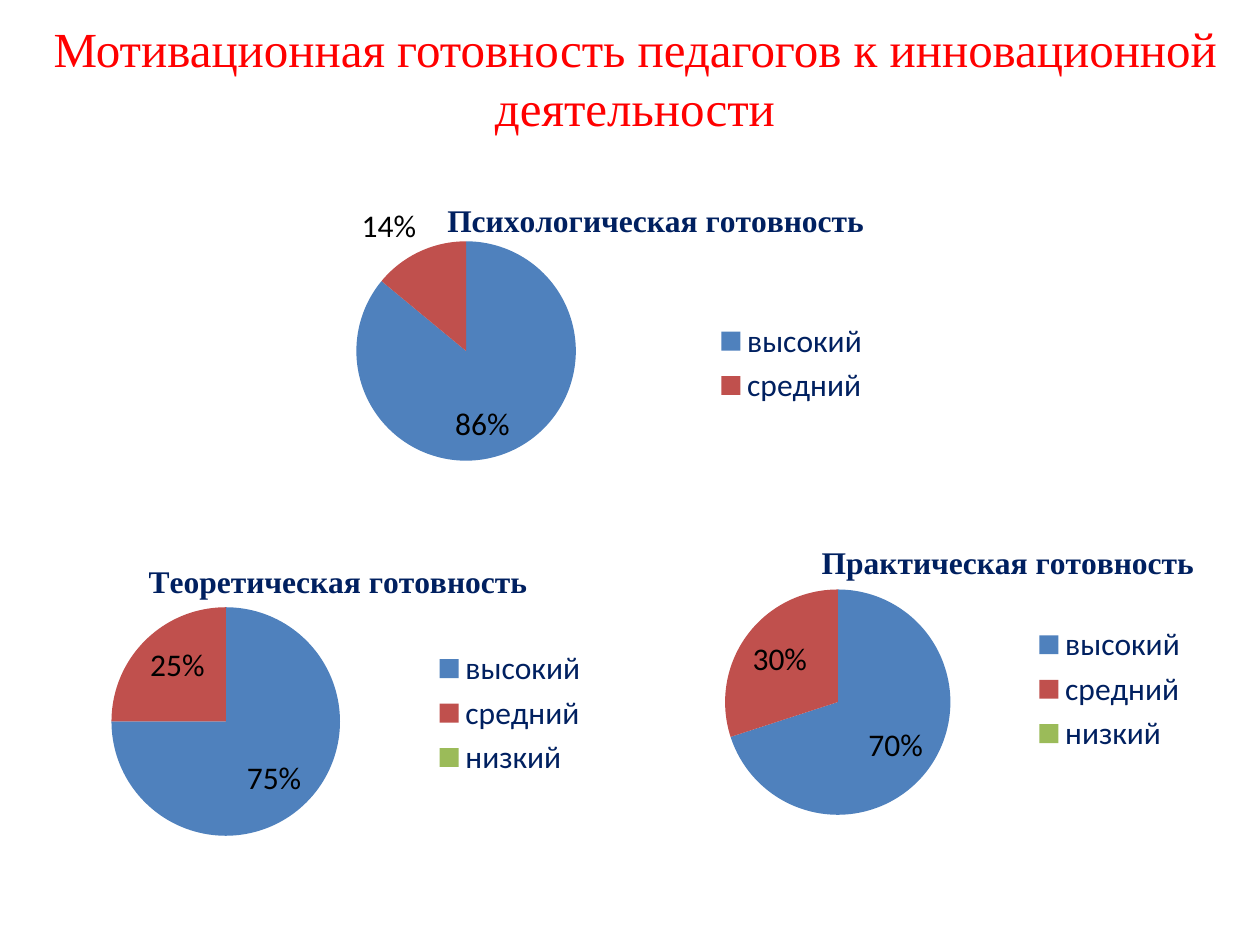
import dataclasses
import typing

import lxml.etree
import pptx
import pptx.chart.data
import pptx.dml.color
import pptx.enum.chart
import pptx.enum.text
import pptx.oxml.ns
import pptx.util

Inches = pptx.util.Inches
Pt = pptx.util.Pt
qn = pptx.oxml.ns.qn
LabelPosition = pptx.enum.chart.XL_LABEL_POSITION

COLORS = {
    "heading": "FF0000",
    "caption": "002060",
    "label": "000000",
    "высокий": "4F81BD",
    "средний": "C0504D",
    "низкий": "9BBB59",
}
LEVELS = ("высокий", "средний", "низкий")
HEADING_FONT = "Times New Roman"
BODY_FONT = "Calibri"


@dataclasses.dataclass
class Pie:
    title: str
    values: tuple
    box: tuple
    plot: tuple
    title_at: tuple
    legend_at: typing.Optional[tuple] = None
    outside_label: typing.Optional[int] = None
    hidden_entry: typing.Optional[int] = None


PIES = (
    Pie("Теоретическая готовность", (0.75, 0.25, None),
        (0.39, 3.98, 4.38, 3.36), (0.08, 0.25, 0.48, 0.54), (0.17, 0.13)),
    Pie("Практическая готовность", (0.7, 0.3, None),
        (5.23, 3.75, 4.3, 3.44), (0.08, 0.27, 0.5, 0.52), (0.29, 0.15)),
    Pie("Психологическая готовность", (0.86, 0.14, None),
        (1.95, 1.41, 6.48, 2.81), (0.07, 0.18, 0.4, 0.62), (0.24, 0.05),
        legend_at=(0.57, 0.39), outside_label=1, hidden_entry=2),
)


def rgb(name: str) -> pptx.dml.color.RGBColor:
    return pptx.dml.color.RGBColor.from_string(COLORS[name])


def style_font(font, name: str, size: float, color: str, bold: bool = False) -> None:
    font.name = name
    font.size = Pt(size)
    font.bold = bold
    font.color.rgb = rgb(color)


def add_element(parent, tag: str, val=None):
    element = lxml.etree.SubElement(parent, qn(tag))
    if val is not None:
        element.set("val", str(val))
    return element


def set_layout(parent, box: tuple, inner: bool = False) -> None:
    for old in parent.findall(qn("c:layout")):
        parent.remove(old)
    layout = add_element(parent, "c:layout")
    manual = add_element(layout, "c:manualLayout")
    if inner:
        add_element(manual, "c:layoutTarget", "inner")
    add_element(manual, "c:xMode", "edge")
    add_element(manual, "c:yMode", "edge")
    for key, value in zip("xywh", box):
        add_element(manual, f"c:{key}", value)
    overlay = parent.find(qn("c:overlay"))
    parent.insert(0 if overlay is None else parent.index(overlay), layout)


def hide_legend_entry(legend, index: int) -> None:
    entry = add_element(legend, "c:legendEntry")
    add_element(entry, "c:idx", index)
    add_element(entry, "c:delete", 1)
    legend.find(qn("c:legendPos")).addnext(entry)


def add_pie(slide, pie: Pie) -> None:
    data = pptx.chart.data.CategoryChartData(number_format="0%")
    data.categories = LEVELS
    data.add_series(pie.title, pie.values)
    chart = slide.shapes.add_chart(
        pptx.enum.chart.XL_CHART_TYPE.PIE, *map(Inches, pie.box), data).chart
    style_font(chart.font, BODY_FONT, 18, "label")

    chart.has_title = True
    tf = chart.chart_title.text_frame
    tf.text = pie.title
    style_font(tf.paragraphs[0].runs[0].font, HEADING_FONT, 18, "caption", bold=True)
    set_layout(chart.chart_title.element, pie.title_at)
    set_layout(chart.element.xpath(".//c:plotArea")[0], pie.plot, inner=True)

    chart.has_legend = True
    chart.legend.position = pptx.enum.chart.XL_LEGEND_POSITION.RIGHT
    chart.legend.include_in_layout = False
    style_font(chart.legend.font, BODY_FONT, 18, "caption")
    legend = chart.element.xpath(".//c:legend")[0]
    if pie.hidden_entry is not None:
        hide_legend_entry(legend, pie.hidden_entry)
    if pie.legend_at:
        set_layout(legend, pie.legend_at)

    plot = chart.plots[0]
    plot.vary_by_categories = True
    series = plot.series[0]
    for i, level in enumerate(LEVELS):
        fill = series.points[i].format.fill
        fill.solid()
        fill.fore_color.rgb = rgb(level)
    labels = series.data_labels
    labels.show_value = True
    labels.show_percentage = False
    labels.number_format = "0%"
    labels.number_format_is_linked = False
    labels.position = LabelPosition.INSIDE_END
    if pie.outside_label is not None:
        series.points[pie.outside_label].data_label.position = LabelPosition.OUTSIDE_END


def set_heading(slide, text: str) -> None:
    sp = slide.shapes.title
    sp.left, sp.top, sp.width, sp.height = map(Inches, (-0.31, 0.31, 10.7, 0.61))
    tf = sp.text_frame
    tf.text = text
    tf.word_wrap = True
    tf.auto_size = pptx.enum.text.MSO_AUTO_SIZE.NONE
    tf.vertical_anchor = pptx.enum.text.MSO_ANCHOR.MIDDLE
    p = tf.paragraphs[0]
    p.alignment = pptx.enum.text.PP_ALIGN.CENTER
    style_font(p.runs[0].font, HEADING_FONT, 28, "heading")


def main() -> None:
    prs = pptx.Presentation()
    prs.slide_width, prs.slide_height = Inches(10), Inches(7.5)
    slide = prs.slides.add_slide(prs.slide_layouts[5])
    set_heading(slide, "Мотивационная готовность педагогов к инновационной деятельности")
    for pie in PIES:
        add_pie(slide, pie)
    prs.save("out.pptx")


if __name__ == "__main__":
    main()
